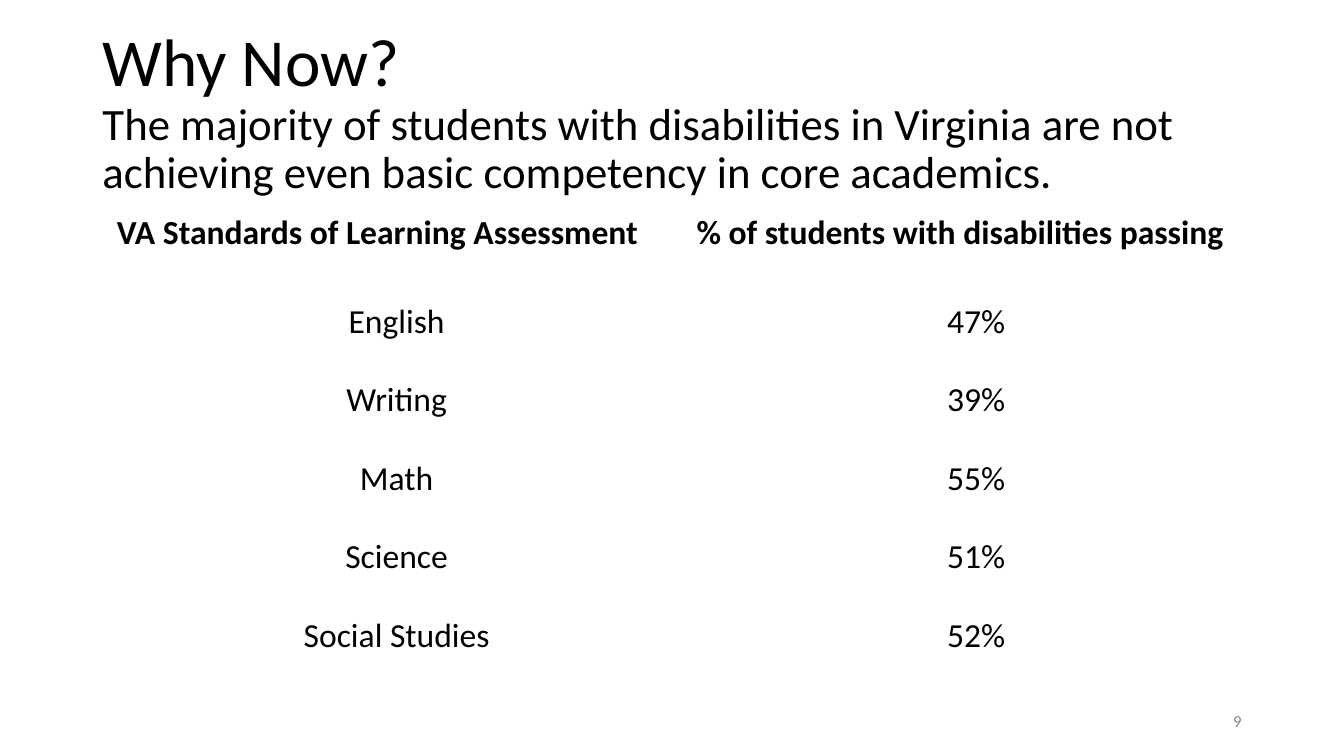
from dataclasses import dataclass

from pptx import Presentation
from pptx.dml.color import RGBColor
from pptx.enum import text
from pptx.util import Pt


@dataclass(frozen=True)
class Theme:
    font: str = "Calibri"
    ink: RGBColor = RGBColor(0, 0, 0)
    muted: RGBColor = RGBColor(0x88, 0x88, 0x88)
    heading: int = 48
    subheading: int = 32
    table: int = 24
    footer: int = 12


THEME = Theme()
LEFT, CENTER, RIGHT = (text.PP_ALIGN.LEFT, text.PP_ALIGN.CENTER, text.PP_ALIGN.RIGHT)

RESULTS = [
    ("VA Standards of Learning Assessment", "% of students with disabilities passing"),
    ("English", "47%"),
    ("Writing", "39%"),
    ("Math", "55%"),
    ("Science", "51%"),
    ("Social Studies", "52%"),
]


def write(para, words, size, color=THEME.ink, bold=False, align=LEFT, spacing=None):
    """Put formatted words into a paragraph."""
    para.alignment = align
    if spacing:
        para.line_spacing = spacing
    span = para.add_run()
    span.text = words
    span.font.name = THEME.font
    span.font.size = Pt(size)
    span.font.bold = bold
    span.font.color.rgb = color


def place(shape, box):
    shape.left, shape.top, shape.width, shape.height = (Pt(n) for n in box)


def add_heading(page, box, heading, subheading):
    title = page.shapes.title
    place(title, box)
    frame = title.text_frame
    frame.word_wrap = True
    frame.auto_size = text.MSO_AUTO_SIZE.NONE
    frame.vertical_anchor = text.MSO_ANCHOR.MIDDLE
    write(frame.paragraphs[0], heading, THEME.heading, spacing=0.9)
    write(frame.add_paragraph(), subheading, THEME.subheading, spacing=0.9)


def add_results(page, box, rows, header_height):
    left, top, width, height = box
    table = page.shapes.add_table(
        len(rows), len(rows[0]), Pt(left), Pt(top), Pt(width), Pt(height)).table
    table.horz_banding = False
    for column in table.columns:
        column.width = Pt(width / len(rows[0]))
    body_height = (height - header_height) / (len(rows) - 1)
    for r, values in enumerate(rows):
        is_header = r == 0
        table.rows[r].height = Pt(header_height if is_header else body_height)
        for c, value in enumerate(values):
            cell = table.cell(r, c)
            cell.fill.background()
            cell.margin_left = cell.margin_right = Pt(7.2)
            cell.margin_top = cell.margin_bottom = Pt(7.2)
            write(cell.text_frame.paragraphs[0], value, THEME.table,
                  bold=is_header, align=LEFT if is_header else CENTER)


def add_page_number(page, box, number):
    frame = page.shapes.add_textbox(*(Pt(n) for n in box)).text_frame
    frame.word_wrap = True
    frame.vertical_anchor = text.MSO_ANCHOR.MIDDLE
    write(frame.paragraphs[0], number, THEME.footer, color=THEME.muted, align=RIGHT)


def main():
    deck = Presentation()
    deck.slide_width, deck.slide_height = Pt(960), Pt(540)
    page = deck.slides.add_slide(deck.slide_layouts[5])

    # Heading and message
    add_heading(page, (66, 28.8, 828, 104.4), "Why Now?",
                "The majority of students with disabilities in Virginia are not "
                "achieving even basic competency in core academics.")
    # Pass rates by subject
    add_results(page, (76.3, 144.7, 828, 344), RESULTS, header_height=63.4)
    # Page number
    add_page_number(page, (678, 500.5, 216, 28.8), "9")

    deck.save("out.pptx")


if __name__ == "__main__":
    main()
